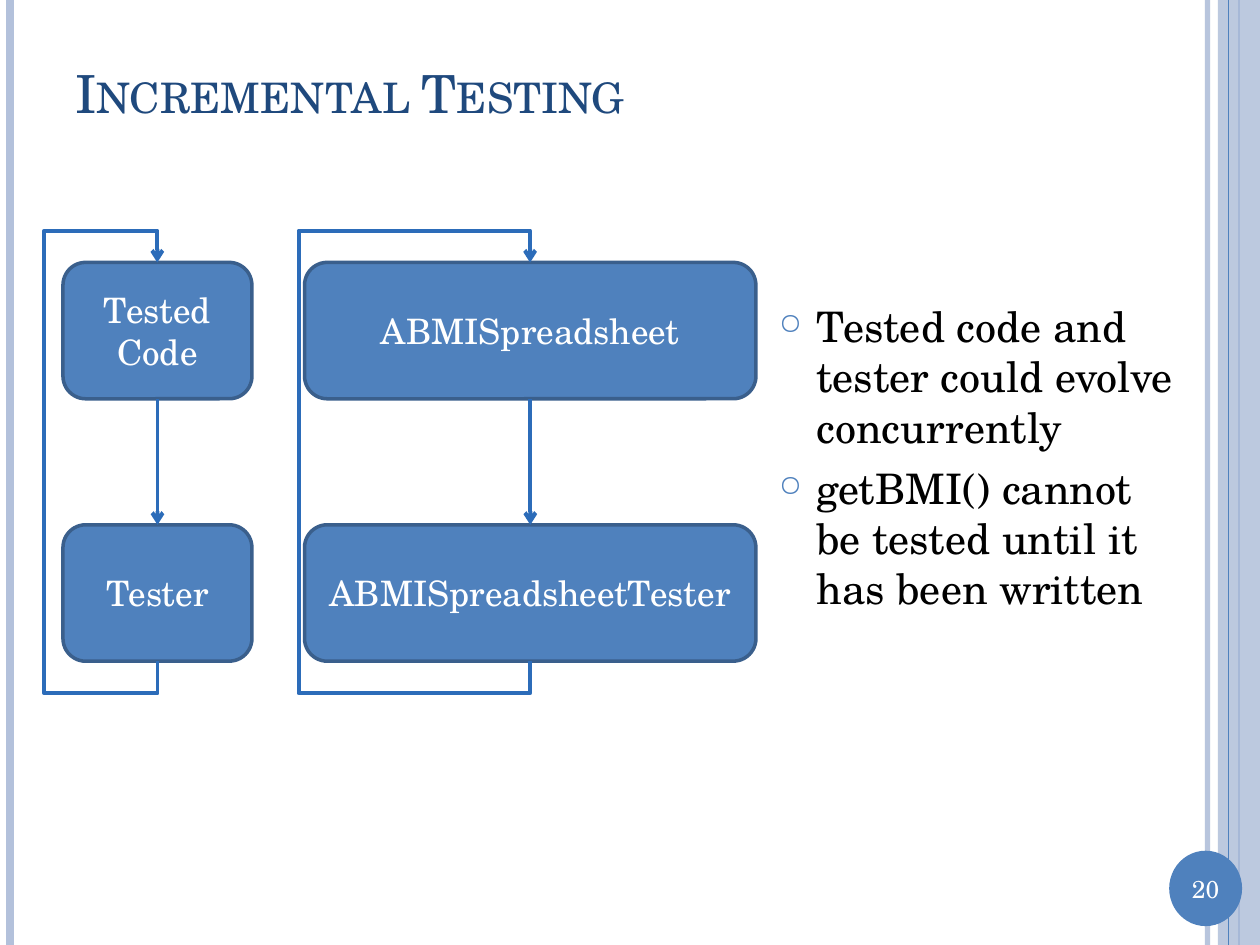
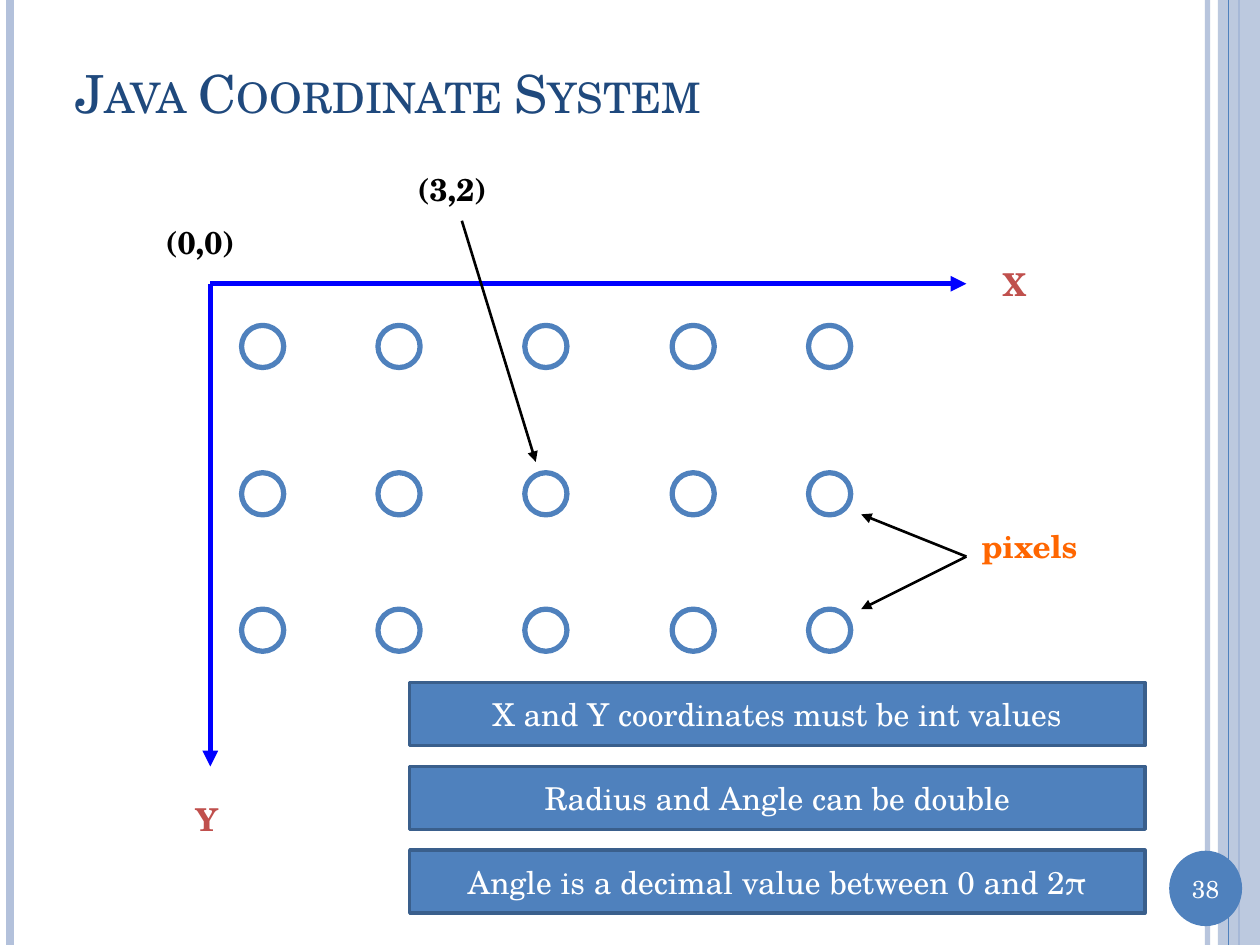
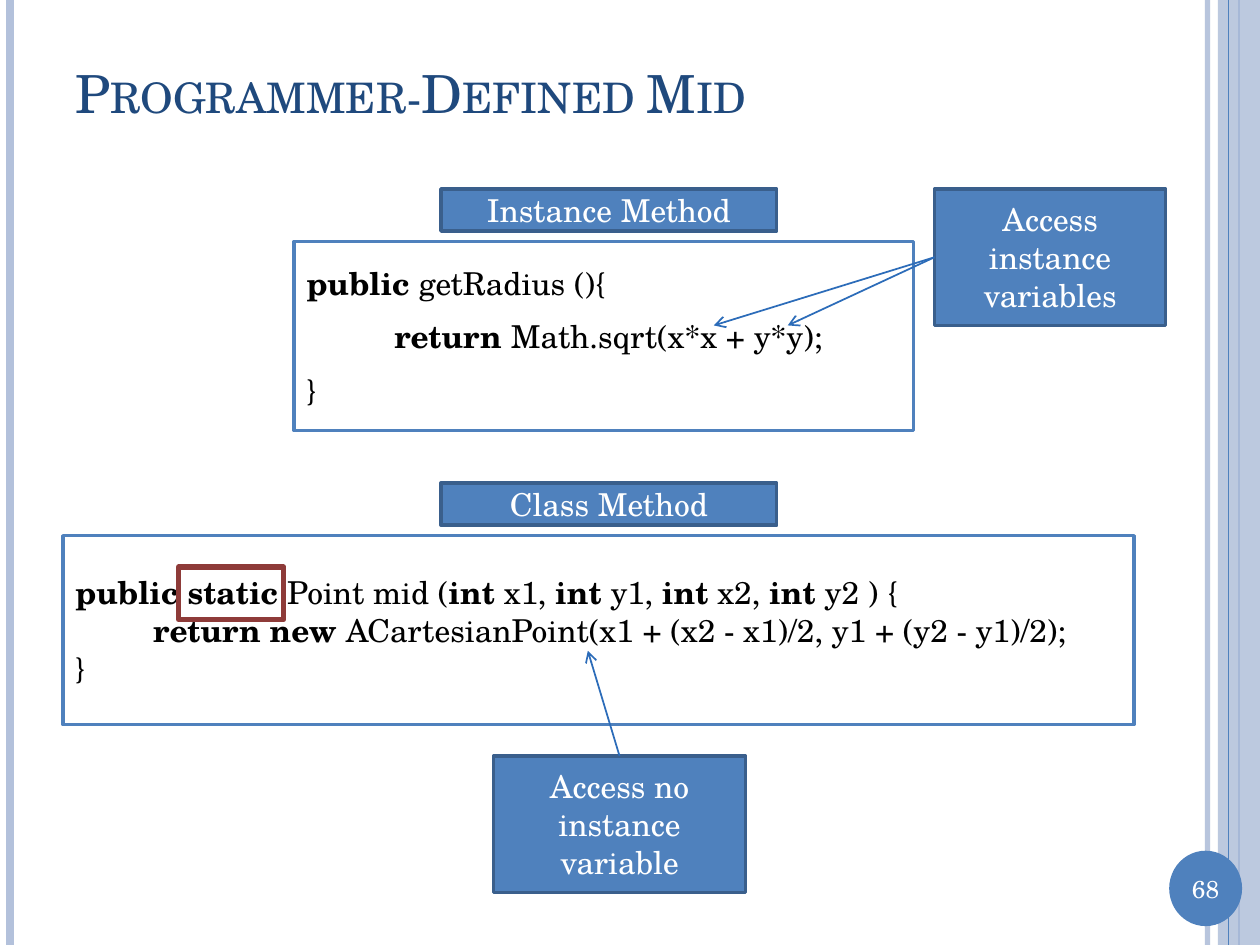
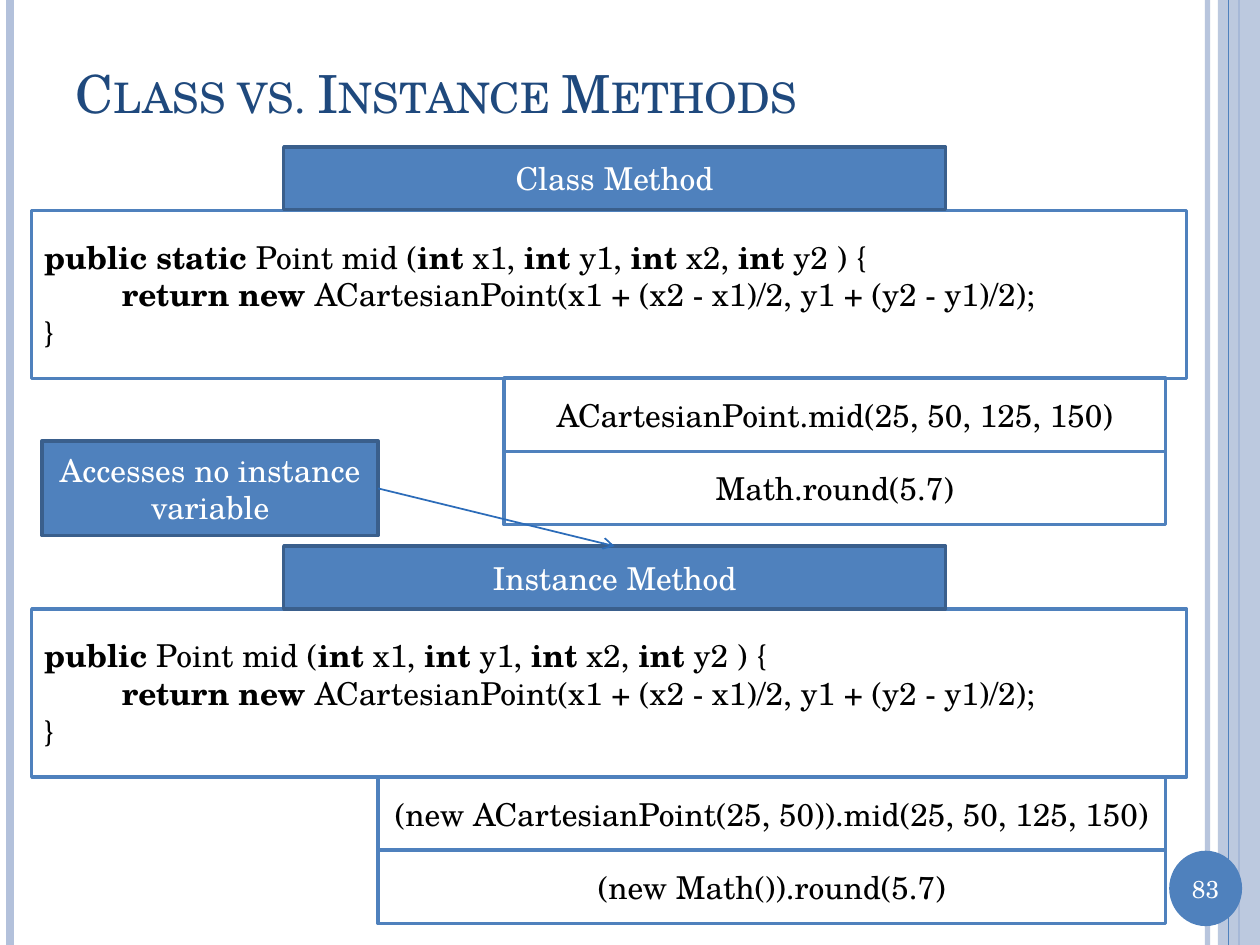
from collections import namedtuple
from dataclasses import dataclass

from lxml.etree import SubElement
from pptx import Presentation
from pptx.dml.color import RGBColor
from pptx.enum.shapes import MSO_CONNECTOR as CONNECTOR, MSO_SHAPE as SHAPE
from pptx.enum.text import MSO_ANCHOR as ANCHOR, PP_ALIGN as ALIGN
from pptx.oxml.ns import qn
from pptx.util import Cm, Emu, Pt


@dataclass(frozen=True)
class Theme:
    font: str = "TeX Gyre Schola"
    title: str = "1F497D"
    accent: str = "4F81BD"
    accent_dark: str = "3A5F8C"
    arrow: str = "2C6CB9"
    band: str = "B3C1DB"
    axis: str = "0000FF"
    axis_name: str = "C0504D"
    pixel_name: str = "FF6600"
    mark: str = "8E3B39"
    black: str = "000000"
    white: str = "FFFFFF"
    title_size: int = 30
    body_size: int = 24
    node_size: int = 20
    text_size: int = 18
    number_size: int = 14


theme = Theme()
Style = namedtuple("Style", "fill line line_width text align", defaults=(ALIGN.CENTER,))
FILLED = Style(theme.accent, theme.accent_dark, 2, theme.white)
OUTLINED = Style(theme.white, theme.accent, 2, theme.black)
CODE = OUTLINED._replace(align=ALIGN.LEFT)
BADGE = Style(theme.accent, None, 0, theme.white)
BAND = Style(theme.band, None, 0, theme.white)
DOT = Style(theme.white, theme.accent, 3, theme.black)
MARK = Style(None, theme.mark, 3, theme.black)
PLAIN = Style(None, None, 0, theme.black, ALIGN.LEFT)
LABEL = PLAIN._replace(align=ALIGN.CENTER)


def add_box(shapes, kind, frame, style, lines=(), size=theme.text_size):
    """Add a shape (a text box if kind is None); each | in a line switches bold."""
    frame = [Cm(length) for length in frame]
    if kind is None:
        shape = shapes.add_textbox(*frame)
    else:
        shape = shapes.add_shape(kind, *frame)
        shape.shadow.inherit = False
    if style.fill:
        shape.fill.solid()
        shape.fill.fore_color.rgb = RGBColor.from_string(style.fill)
    else:
        shape.fill.background()
    if style.line:
        shape.line.color.rgb = RGBColor.from_string(style.line)
        shape.line.width = Pt(style.line_width)
    else:
        shape.line.fill.background()
    text_frame = shape.text_frame
    text_frame.word_wrap = True
    text_frame.vertical_anchor = ANCHOR.MIDDLE
    for index, line in enumerate(lines):
        paragraph = text_frame.paragraphs[0] if index == 0 else text_frame.add_paragraph()
        paragraph.alignment = style.align
        paragraph.font.name = theme.font
        paragraph.font.size = Pt(size)
        paragraph.font.color.rgb = RGBColor.from_string(style.text)
        for part, text in enumerate(line.split("|")):
            if text:
                run = paragraph.add_run()
                run.text = text
                if part % 2:
                    run.font.bold = True
    return shape


def add_line(shapes, start, end, color, width, tail=None, kind=CONNECTOR.STRAIGHT):
    connector = shapes.add_connector(kind, *[Cm(length) for length in (*start, *end)])
    connector.line.color.rgb = RGBColor.from_string(color)
    connector.line.width = Pt(width)
    if tail:
        SubElement(connector.line._get_or_add_ln(), qn("a:tailEnd"), type=tail)
    SubElement(connector._element.spPr, qn("a:effectLst"))
    return connector


presentation = Presentation()
presentation.slide_width, presentation.slide_height = Cm(25.4), Cm(19.05)
blank_layout = presentation.slide_layouts[6]

# Shared frame of every slide
all_shapes = []
for title, number in (
    ("Incremental Testing", 20),
    ("Java Coordinate System", 38),
    ("Programmer-Defined Mid", 68),
    ("Class vs. Instance Methods", 83),
):
    shapes = presentation.slides.add_slide(blank_layout).shapes
    all_shapes.append(shapes)
    pale_line, *_ = [
        add_line(shapes, (x, 0), (x, 19.05), color, width)
        for x, color, width in (
            (24.34, theme.band, 3),
            (0.21, theme.band, 4.5),
            (24.98, theme.accent, 1.5),
        )
    ]
    band = add_box(shapes, SHAPE.RECTANGLE, (24.55, 0, 0.85, 19.05), BAND)
    for shape, opacity in ((pale_line, 93), (band, 87)):
        color = shape._element.spPr.find(".//" + qn("a:srgbClr"))
        SubElement(color, qn("a:alpha"), val=str(opacity * 1000))
    add_line(shapes, (24.77, 0), (24.77, 19.05), theme.accent, 0.75)
    badge = add_box(shapes, SHAPE.OVAL, (23.57, 17.15, 1.47, 1.52), BADGE,
                    [str(number)], theme.number_size)
    badge.text_frame.margin_left = badge.text_frame.margin_right = 0
    heading = add_box(shapes, None, (1.27, 0.76, 22.02, 2.21), PLAIN._replace(text=theme.title),
                      [title], theme.title_size)
    heading.text_frame.paragraphs[0].runs[0]._r.get_or_add_rPr().set("cap", "small")

testing, coordinates, programmer_mid, methods = all_shapes

# Incremental testing: code and tester, with a loop back
node_top, node_step, node_height, loop_margin = 5.29, 5.29, 2.75, 0.64
node_span = node_step + node_height
for left, width, loop_left, names in (
    (1.27, 3.81, 0.64, ("Tested Code", "Tester")),
    (6.14, 9.1, 5.5, ("ABMISpreadsheet", "ABMISpreadsheetTester")),
):
    center = left + width / 2
    code, tester = [
        add_box(testing, SHAPE.ROUNDED_RECTANGLE,
                (left, node_top + row * node_step, width, node_height),
                FILLED, [name], theme.node_size)
        for row, name in enumerate(names)
    ]
    arrow = add_line(testing, (center, node_top + node_height), (center, node_top + node_step),
                     theme.arrow, 2.25, "arrow")
    arrow.begin_connect(code, 2)
    arrow.end_connect(tester, 0)

    loop = add_line(testing, (center, node_top + node_span), (center, node_top),
                    theme.arrow, 2.25, "arrow", CONNECTOR.ELBOW)
    loop.begin_connect(tester, 2)
    loop.end_connect(code, 0)
    # A quarter turn of a flat five-part elbow; the bends are shares of its size
    loop.left, loop.top = Cm(center - node_span / 2), Cm(node_top + node_span / 2)
    loop.width, loop.height = Cm(node_span), Emu(1600)
    transform = loop._element.spPr.find(qn("a:xfrm"))
    for name in ("flipH", "flipV"):
        transform.attrib.pop(name, None)
    transform.set("rot", "5400000")
    transform.set("flipH", "1")
    geometry = loop._element.spPr.find(qn("a:prstGeom"))
    geometry.set("prst", "bentConnector5")
    guides = geometry.find(qn("a:avLst"))
    overshoot = loop_margin / node_span
    sideways = Cm(center - loop_left) / loop.height
    for index, share in enumerate((-overshoot, sideways, 1 + overshoot), start=1):
        SubElement(guides, qn("a:gd"), name=f"adj{index}", fmla=f"val {round(share * 100000)}")

notes = add_box(testing, None, (15.45, 5.93, 8.68, 7.2), PLAIN, (
    "Tested code and tester could evolve concurrently",
    "getBMI() cannot be tested until it has been written",
), theme.body_size)
notes.text_frame.vertical_anchor = ANCHOR.TOP
for paragraph in notes.text_frame.paragraphs:
    paragraph.space_before = Pt(6)
    properties = paragraph._p.get_or_add_pPr()
    properties.set("marL", str(Cm(0.76)))
    properties.set("indent", str(-Cm(0.76)))
    bullet_color = properties.makeelement(qn("a:buClr"))
    SubElement(bullet_color, qn("a:srgbClr"), val=theme.accent)
    bullet_size = properties.makeelement(qn("a:buSzPct"), val="70000")
    bullet = properties.makeelement(qn("a:buChar"), char="○")
    for element in (bullet_color, bullet_size, bullet):
        properties.find(qn("a:defRPr")).addprevious(element)

# Java coordinate system: axes, pixel grid, labels and rules
for axis_end in ((4.24, 15.45), (19.48, 5.72)):
    add_line(coordinates, (4.24, 5.72), axis_end, theme.axis, 3, "triangle")
pixel_grid = coordinates.add_group_shape().shapes
for top in (6.56, 9.53, 12.28):
    for left in (4.87, 7.62, 10.58, 13.55, 16.3):
        add_box(pixel_grid, SHAPE.OVAL, (left, top, 0.85, 0.85), DOT)

point_group = coordinates.add_group_shape().shapes
pixels_group = coordinates.add_group_shape().shapes
for shapes, text, left, top, width, color in (
    (coordinates, "Y", 3.61, 15.88, 1.12, theme.axis_name),
    (coordinates, "X", 19.89, 5.08, 1.12, theme.axis_name),
    (coordinates, "(0,0)", 2.97, 4.24, 2.13, theme.black),
    (point_group, "(3,2)", 8.05, 3.18, 2.13, theme.black),
    (pixels_group, "pixels", 19.46, 10.37, 2.59, theme.pixel_name),
):
    add_box(shapes, None, (left, top, width, 1.27), LABEL._replace(text=color), ["|" + text])
for shapes, start, end in (
    (point_group, (9.31, 4.45), (10.8, 9.31)),
    (pixels_group, (19.48, 11.22), (17.36, 10.37)),
    (pixels_group, (19.48, 11.22), (17.36, 12.28)),
):
    add_line(shapes, start, end, theme.black, 1.5, "triangle")

for row, rule in enumerate((
    "X and Y coordinates must be int values",
    "Radius and Angle can be double",
    "Angle is a decimal value between 0 and 2π",
)):
    add_box(coordinates, SHAPE.RECTANGLE, (8.26, 13.76 + row * 1.69, 14.82, 1.27),
            FILLED, [rule])

# Code shared by the last two slides
parameters = ", ".join(f"|int| {name}" for name in ("x1", "y1", "x2", "y2"))
mid_body = (
    f" Point mid ({parameters} ) {{",
    "|return new |ACartesianPoint(x1 + (x2 - x1)/2, y1 + (y2 - y1)/2);",
    "}",
)
class_mid = ("|public static|" + mid_body[0], *mid_body[1:])
instance_mid = ("|public|" + mid_body[0], *mid_body[1:])
radius_code = ("|public |getRadius (){", "|return |Math.sqrt(x*x + y*y);", "}")

for shapes, frame, lines, indent, space in (
    (programmer_mid, (5.93, 4.87, 12.49, 3.81), radius_code, 1.77, 9),
    (programmer_mid, (1.27, 10.8, 21.59, 3.81), class_mid, 1.57, 0),
    (methods, (0.64, 4.24, 23.28, 3.39), class_mid, 1.57, 0),
    (methods, (0.64, 12.28, 23.28, 3.39), instance_mid, 1.57, 0),
):
    code_box = add_box(shapes, SHAPE.RECTANGLE, frame, CODE, lines)
    for paragraph in code_box.text_frame.paragraphs:
        paragraph.space_before = Pt(space)
    code_box.text_frame.paragraphs[1]._p.pPr.set("marL", str(Cm(indent)))

# Programmer-defined mid: headings, mark and callouts
add_box(programmer_mid, SHAPE.RECTANGLE, (3.6, 11.43, 2.12, 1.06), MARK)
for top, text in ((3.81, "Instance Method"), (9.74, "Class Method")):
    add_box(programmer_mid, SHAPE.RECTANGLE, (8.89, top, 6.77, 0.85), FILLED, [text])
variables_callout = add_box(programmer_mid, SHAPE.RECTANGLE, (18.84, 3.81, 4.66, 2.75),
                            FILLED, ["Access instance variables"])
no_variable_callout = add_box(programmer_mid, SHAPE.RECTANGLE, (9.95, 15.24, 5.08, 2.75),
                              FILLED, ["Access no instance variable"])
for callout, side, start, end in (
    (variables_callout, 1, (18.84, 5.19), (14.39, 6.56)),
    (variables_callout, 1, (18.84, 5.19), (15.88, 6.56)),
    (no_variable_callout, 0, (12.49, 15.24), (11.85, 13.12)),
):
    add_line(programmer_mid, start, end, theme.arrow, 1, "arrow").begin_connect(callout, side)

# Class vs. instance methods: calls, headings and callout
call_height = 1.48
for left, top, width, calls in (
    (10.16, 7.62, 13.34, ("ACartesianPoint.mid(25, 50, 125, 150)", "Math.round(5.7)")),
    (7.62, 15.66, 15.88, ("(new ACartesianPoint(25, 50)).mid(25, 50, 125, 150)",
                          "(new Math()).round(5.7)")),
):
    for row, call in enumerate(calls):
        add_box(methods, SHAPE.RECTANGLE, (left, top + row * call_height, width, call_height),
                OUTLINED, [call])
class_heading, instance_heading = [
    add_box(methods, SHAPE.RECTANGLE, (5.72, top, 13.34, 1.27), FILLED, [text])
    for top, text in ((2.96, "Class Method"), (11.01, "Instance Method"))
]
callout = add_box(methods, SHAPE.RECTANGLE, (0.85, 8.89, 6.77, 1.91), FILLED,
                  ["Accesses no instance variable"])
arrow = add_line(methods, (7.62, 9.84), (12.39, 11.01), theme.arrow, 1, "arrow")
arrow.begin_connect(callout, 3)
arrow.end_connect(instance_heading, 0)

presentation.save("out.pptx")
